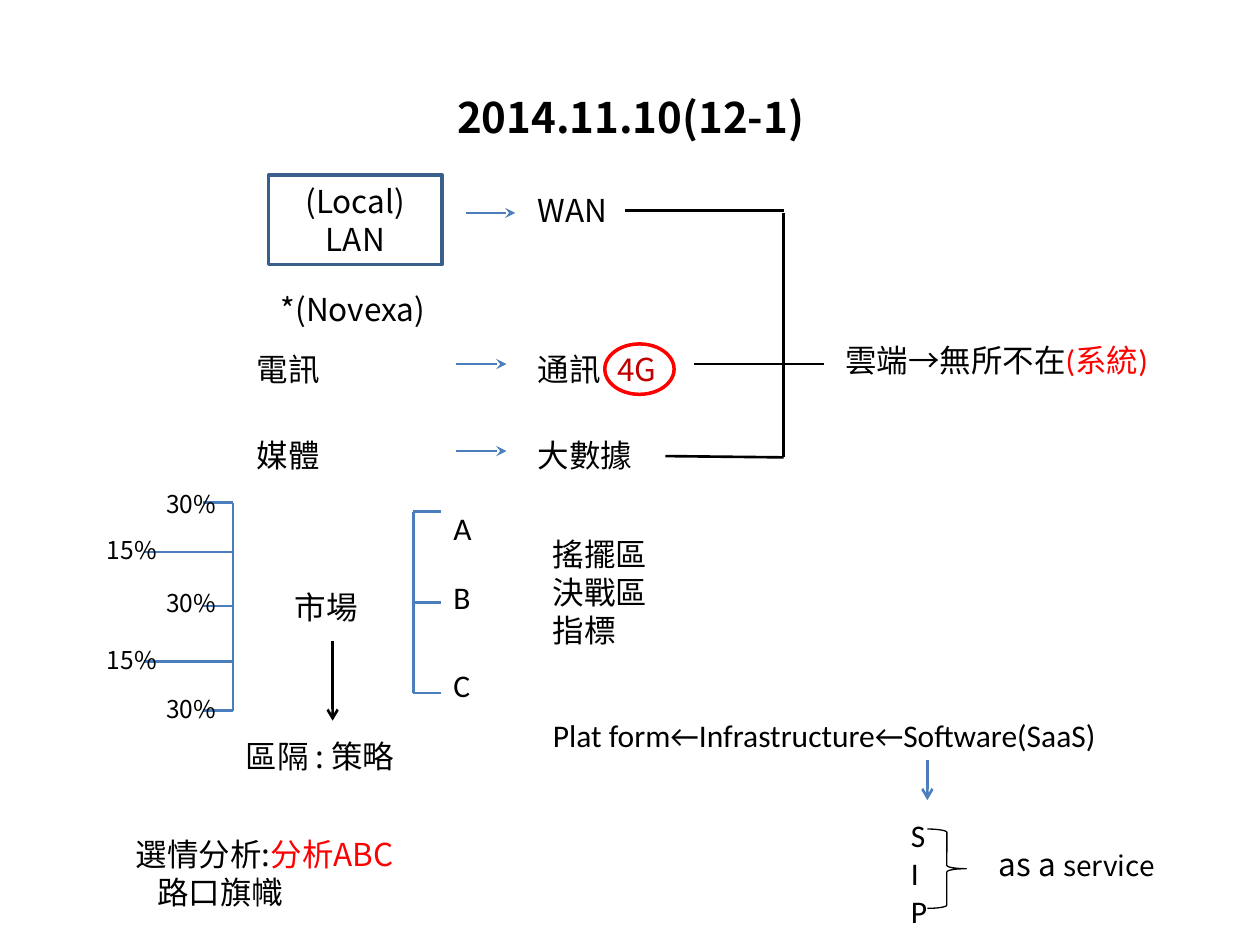
from pptx import Presentation
from pptx.dml.color import RGBColor
from pptx.enum.shapes import MSO_CONNECTOR, MSO_SHAPE as Shape
from pptx.enum.text import MSO_ANCHOR as Anchor, PP_ALIGN as Align
from pptx.oxml.ns import qn
from pptx.util import Inches, Pt
from lxml.etree import SubElement

NOTO, CALIBRI = "Noto Sans CJK SC", "Calibri"
BLACK, RED, DARK_RED = "000000", "FF0000", "C00000"
BLUE, NAVY = "4B7EBC", "3A5F8C"

# Column edges and row tops of the diagram, in inches
LEFT, MID, RIGHT = 1.94, 4.17, 4.29
WAN_Y, TELECOM_Y, MEDIA_Y = 1.47, 2.73, 3.41
SHARE_X, SHARE_INNER, SHARE_OUTER = 1.85, 1.61, 1.14
CLASS_X, CLASS_END = 3.28, 3.5
BUS_X = 6.22

# Text: left, top, width, height, paragraphs of (text, colour, size) runs, font
TEXTS = [
    (2.13, 2.25, 1.57, 0.4, [[("*(Novexa)", BLACK, 18)]], NOTO),
    (MID, WAN_Y, 1.1, 0.4, [[("WAN", BLACK, 18)]], NOTO),
    (LEFT, TELECOM_Y, 1.96, 0.4, [[("電訊", BLACK, 18)]], NOTO),
    (MID, TELECOM_Y, 1.1, 0.4, [[("通訊", BLACK, 18)]], NOTO),
    (4.8, TELECOM_Y, 0.55, 0.4, [[("4G", DARK_RED, 18)]], NOTO),
    (LEFT, MEDIA_Y, 1.96, 0.4, [[("媒體", BLACK, 18)]], NOTO),
    (MID, MEDIA_Y, 1.1, 0.4, [[("大數據", BLACK, 18)]], NOTO),
    (6.61, 2.66, 2.8, 0.4,
     [[("雲端→無所不在", BLACK, 18), ("(系統)", RED, 18)]], CALIBRI),
    (2.24, 4.62, 0.87, 0.4, [[("市場", BLACK, 18)]], NOTO),
    (SHARE_X, 5.8, 1.65, 0.4, [[("區隔 : 策略", BLACK, 18)]], NOTO),
    (RIGHT, 4.2, 1.06, 1.01,
     [[(t, BLACK, 18)] for t in ("搖擺區", "決戰區", "指標")], NOTO),
    (RIGHT, 5.63, 5.2, 0.4,
     [[("Plat form←Infrastructure←Software(SaaS)", BLACK, 18)]], CALIBRI),
    (7.13, 6.43, 0.71, 1.01, [[(t, BLACK, 18)] for t in "SIP"], CALIBRI),
    (7.83, 6.66, 2.0, 0.4,
     [[("as a ", BLACK, 18), ("service", BLACK, 16)]], NOTO),
]
# Market shares: label, label left, label top, tick y, tick start
SHARES = [
    ("30%", 1.22, 3.83, 3.99, SHARE_INNER),
    ("15%", 0.75, 4.2, 4.38, SHARE_OUTER),
    ("30%", 1.22, 4.62, 4.81, SHARE_INNER),
    ("15%", 0.75, 5.07, 5.25, SHARE_OUTER),
    ("30%", 1.22, 5.46, 5.64, SHARE_INNER),
]
# Classes: label, label top, tick y
CLASSES = [("A", 3.99, 4.06), ("B", 4.54, 4.78), ("C", 5.24, 5.5)]

# Lines: x1, y1, x2, y2, colour, arrowhead
LINES = [
    (3.7, 1.69, 4.09, 1.69, BLUE, "stealth"),
    (3.62, 2.89, 4.02, 2.89, BLUE, "stealth"),
    (3.62, 3.58, 4.02, 3.58, BLUE, "stealth"),
    (4.96, 1.67, BUS_X, 1.67, BLACK, None),
    (BUS_X, 1.69, BUS_X, 3.63, BLACK, None),
    (5.28, 3.62, BUS_X, 3.63, BLACK, None),
    (5.51, 2.89, 6.54, 2.89, BLACK, None),
    (2.64, 5.09, 2.64, 5.72, BLACK, "arrow"),
    (7.36, 6.03, 7.36, 6.35, BLUE, "arrow"),
]
# Bent arrow from LAN: start, then Bezier segments
BEND_START = (2.03, 1.69)
BEND = [
    ((2.02, 1.69), (2.02, 1.69), (1.98, 1.77)),
    ((1.93, 1.86), (1.75, 2.09), (1.77, 2.2)),
    ((1.8, 2.32), (1.95, 2.39), (2.11, 2.46)),
]

prs = Presentation()
prs.slide_width, prs.slide_height = Inches(10), Inches(7.5)
s = prs.slides.add_slide(prs.slide_layouts[6])


def rgb(color):
    return RGBColor.from_string(color)


def write(tf, paragraphs, font, align=Align.LEFT, bold=False):
    tf.word_wrap = True
    for i, runs in enumerate(paragraphs):
        p = tf.paragraphs[0] if i == 0 else tf.add_paragraph()
        p.alignment = align
        p.line_spacing = Pt(1.2 * runs[0][2])
        for text, color, size in runs:
            r = p.add_run()
            r.text = text
            r.font.size, r.font.bold, r.font.name = Pt(size), bold, font
            r.font.color.rgb = rgb(color)
            SubElement(r.font._element, qn("a:ea")).set("typeface", NOTO)


def add_text(x, y, w, h, paragraphs, font, **style):
    sp = s.shapes.add_textbox(Inches(x), Inches(y), Inches(w), Inches(h))
    write(sp.text_frame, paragraphs, font, **style)
    return sp


def set_line(sp, color, width, head=None):
    sp.line.color.rgb = rgb(color)
    sp.line.width = Pt(width)
    if head:
        SubElement(sp.line._get_or_add_ln(), qn("a:tailEnd")).set("type", head)


def add_line(x1, y1, x2, y2, color, head=None):
    sp = s.shapes.add_connector(MSO_CONNECTOR.STRAIGHT, Inches(x1), Inches(y1),
                                Inches(x2), Inches(y2))
    set_line(sp, color, 1.5, head)
    SubElement(sp._element.spPr, qn("a:effectLst"))


def add_outline(kind, x, y, w, h, color, width):
    sp = s.shapes.add_shape(kind, Inches(x), Inches(y), Inches(w), Inches(h))
    sp.shadow.inherit = False
    sp.fill.background()
    set_line(sp, color, width)
    return sp


def bezier(points, steps=10):
    for n in range(1, steps + 1):
        t = n / steps
        weights = ((1 - t) ** 3, 3 * t * (1 - t) ** 2, 3 * t * t * (1 - t), t ** 3)
        yield tuple(sum(k * pt[axis] for k, pt in zip(weights, points))
                    for axis in (0, 1))


# Title
add_text(2.05, 0.68, 5.91, 0.5, [[("2014.11.10(12-1)", BLACK, 24)]], NOTO,
         align=Align.CENTER, bold=True)

# LAN box, 4G ring and service brace
lan = add_outline(Shape.RECTANGLE, 2.13, 1.39, 1.38, 0.71, NAVY, 2)
lan.text_frame.vertical_anchor = Anchor.MIDDLE
write(lan.text_frame, [[("(Local)", BLACK, 18)], [("LAN", BLACK, 18)]], NOTO,
      align=Align.CENTER)
add_outline(Shape.OVAL, 4.8, 2.73, 0.55, 0.4, RED, 2)
add_outline(Shape.RIGHT_BRACE, 7.36, 6.58, 0.31, 0.63, BLACK, 0.75)

# Bent arrow
curve = [BEND_START]
for segment in BEND:
    curve.extend(bezier((curve[-1], *segment)))
builder = s.shapes.build_freeform(*curve[0], scale=Inches(1))
builder.add_line_segments(curve[1:], close=False)
bend = builder.convert_to_shape()
bend.shadow.inherit = False
bend.fill.background()
set_line(bend, NAVY, 2, "stealth")

# Lines and arrows
for line in LINES:
    add_line(*line)

# Market share bracket
for label, x, top, y, start in SHARES:
    add_line(start, y, SHARE_X, y, BLUE)
    add_text(x, top, 0.71, 0.34, [[(label, BLACK, 14)]], NOTO)
add_line(SHARE_X, SHARES[0][3], SHARE_X, SHARES[-1][3], BLUE)

# Class bracket
for label, top, y in CLASSES:
    add_line(CLASS_X, y, CLASS_END, y, BLUE)
    add_text(CLASS_END, top, 0.55, 0.4, [[(label, BLACK, 18)]], CALIBRI)
add_line(CLASS_X, CLASSES[0][2], CLASS_X, CLASSES[-1][2], BLUE)

# Labels
for text in TEXTS:
    add_text(*text)

# Election analysis, second line indented
analysis = add_text(0.98, 6.58, 2.52, 0.71,
                    [[("選情分析:", BLACK, 18), ("分析ABC", RED, 18)],
                     [("路口旗幟", BLACK, 18)]], NOTO)
indented = analysis.text_frame.paragraphs[1]
indented._p.get_or_add_pPr().set("marL", str(Inches(0.17)))

prs.save("out.pptx")
